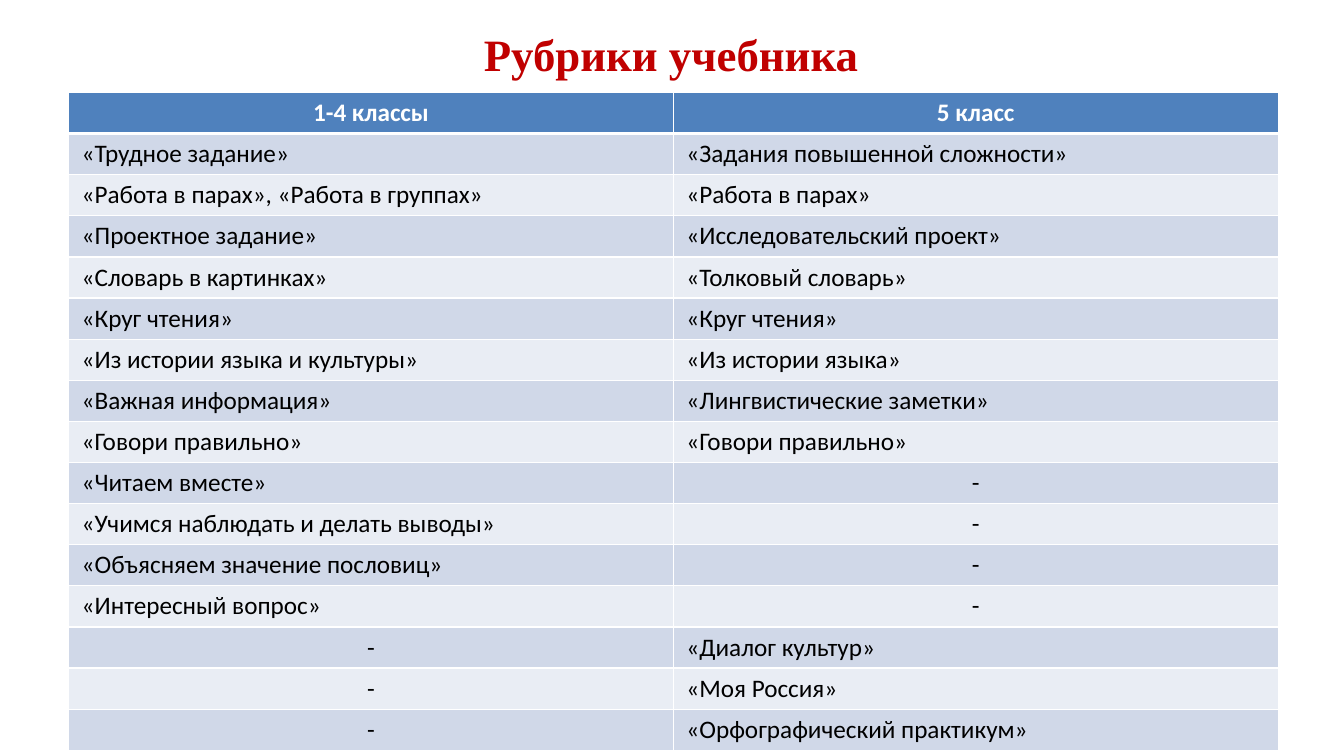
"""Builds the slide comparing textbook rubrics of grades 1-4 and grade 5."""
import pptx
import pptx.dml.color
import pptx.enum.text
import pptx.oxml
import pptx.oxml.ns
import pptx.util
from pptx.util import Cm

THEME = {
    "title": {"name": "Times New Roman", "size": 32, "bold": True, "color": "C00000"},
    "header": {"name": "Calibri", "size": 18, "bold": True, "color": "FFFFFF"},
    "body": {"name": "Calibri", "size": 18, "bold": False, "color": "000000"},
    "header_fill": "4F81BD",
    "band_fills": ("E9EDF4", "D0D8E8"),
    "border": "FFFFFF",
}
ALIGN = pptx.enum.text.PP_ALIGN
ANCHOR = pptx.enum.text.MSO_ANCHOR
RUBRICS = [
    ("1-4 классы", "5 класс"),
    ("«Трудное задание»", "«Задания повышенной сложности»"),
    ("«Работа в парах», «Работа в группах»", "«Работа в парах»"),
    ("«Проектное задание»", "«Исследовательский проект»"),
    ("«Словарь в картинках»", "«Толковый словарь»"),
    ("«Круг чтения»", "«Круг чтения»"),
    ("«Из истории языка и культуры»", "«Из истории языка»"),
    ("«Важная информация»", "«Лингвистические заметки»"),
    ("«Говори правильно»", "«Говори правильно»"),
    ("«Читаем вместе»", "-"),
    ("«Учимся наблюдать и делать выводы»", "-"),
    ("«Объясняем значение пословиц»", "-"),
    ("«Интересный вопрос»", "-"),
    ("-", "«Диалог культур»"),
    ("-", "«Моя Россия»"),
    ("-", "«Орфографический практикум»"),
]


def write(tf, text, style, align):
    """Put one formatted paragraph into a text frame."""
    p = tf.paragraphs[0]
    p.alignment = align
    r = p.add_run()
    r.text = text
    values = {**THEME[style], "size": pptx.util.Pt(THEME[style]["size"])}
    r.font.color.rgb = pptx.dml.color.RGBColor.from_string(values.pop("color"))
    for name, value in values.items():
        setattr(r.font, name, value)


def add_border(cell, side, width):
    """Add one solid border line to a table cell."""
    cell._tc.get_or_add_tcPr().append(pptx.oxml.parse_xml(
        f'<a:ln{side} {pptx.oxml.ns.nsdecls("a")} w="{pptx.util.Pt(width)}">'
        f'<a:solidFill><a:srgbClr val="{THEME["border"]}"/></a:solidFill></a:ln{side}>'))


prs = pptx.Presentation()
prs.slide_width, prs.slide_height = Cm(33.87), Cm(19.05)
s = prs.slides.add_slide(prs.slide_layouts[5])

title = s.shapes.title
title.left, title.top, title.width, title.height = Cm(1.7), Cm(0.76), Cm(30.43), Cm(1.17)
title.text_frame.auto_size = pptx.enum.text.MSO_AUTO_SIZE.NONE
title.text_frame.vertical_anchor = ANCHOR.MIDDLE
write(title.text_frame, "Рубрики учебника", "title", ALIGN.CENTER)

row_height = Cm(1.03)
table = s.shapes.add_table(len(RUBRICS), 2, Cm(1.73), Cm(2.33), Cm(30.48),
                           row_height * len(RUBRICS)).table
cell_format = {"margin_left": Cm(0.33), "margin_right": Cm(0.33),
               "margin_top": Cm(0.13), "margin_bottom": Cm(0.13),
               "vertical_anchor": ANCHOR.TOP}
for i, rubrics in enumerate(RUBRICS):
    table.rows[i].height = row_height
    fill = THEME["band_fills"][i % 2] if i else THEME["header_fill"]
    for j, text in enumerate(rubrics):
        cell = table.cell(i, j)
        for name, value in cell_format.items():
            setattr(cell, name, value)
        for side in "LRTB":
            thick = (i, side) in ((0, "B"), (1, "T"))
            add_border(cell, side, 3 if thick else 1)
        cell.fill.solid()
        cell.fill.fore_color.rgb = pptx.dml.color.RGBColor.from_string(fill)
        centred = i == 0 or text == "-"
        write(cell.text_frame, text, "body" if i else "header",
              ALIGN.CENTER if centred else ALIGN.LEFT)

prs.save("out.pptx")
